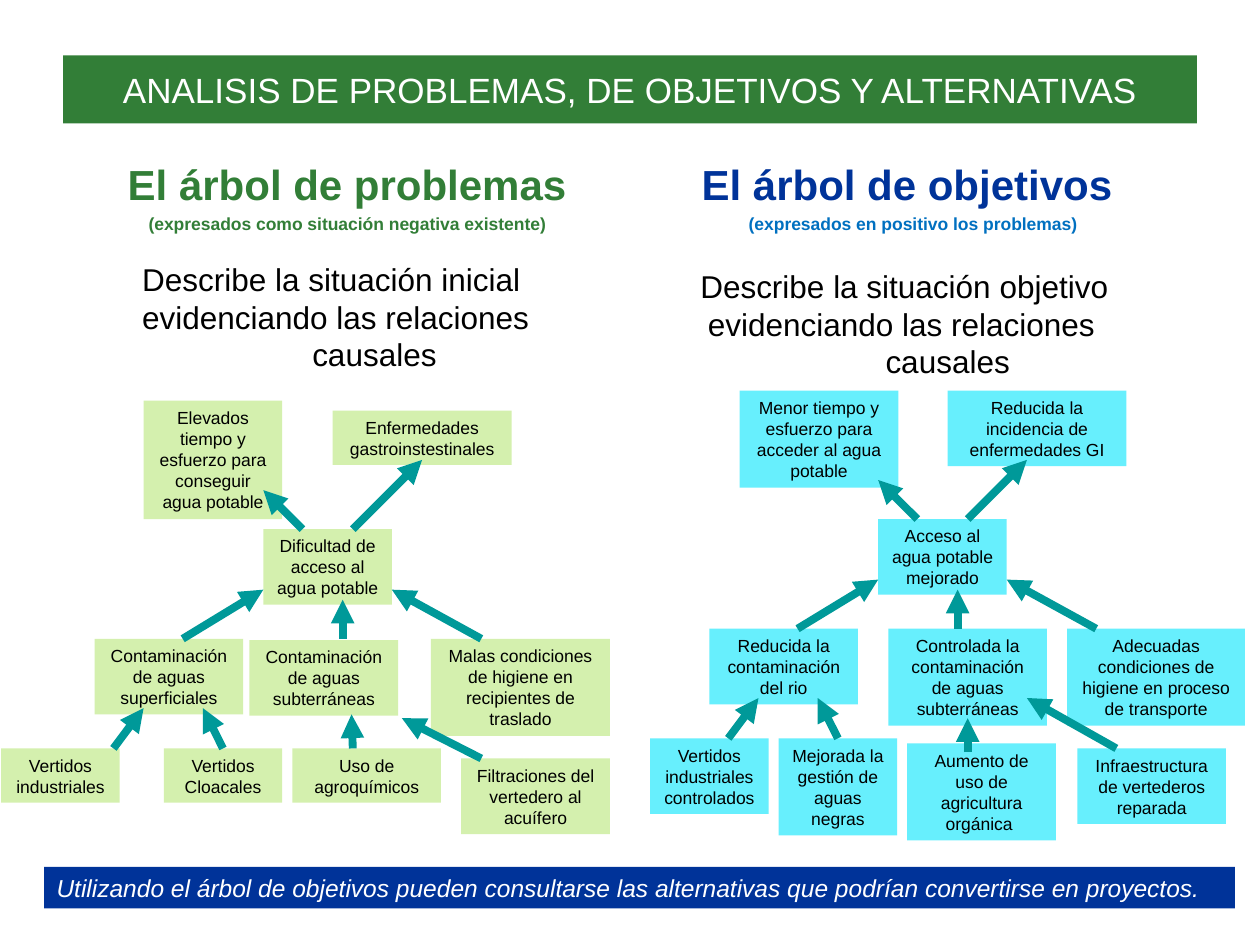
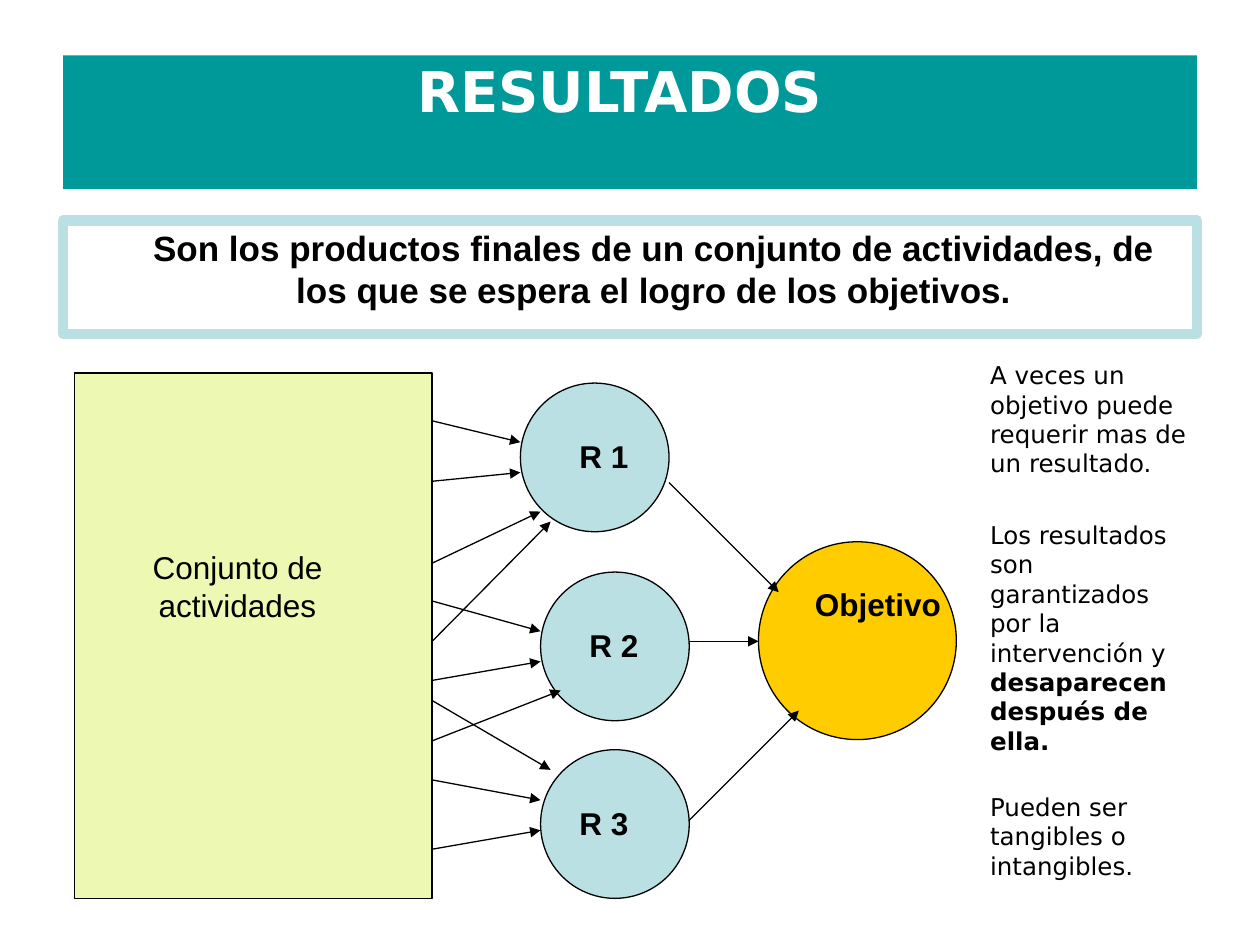
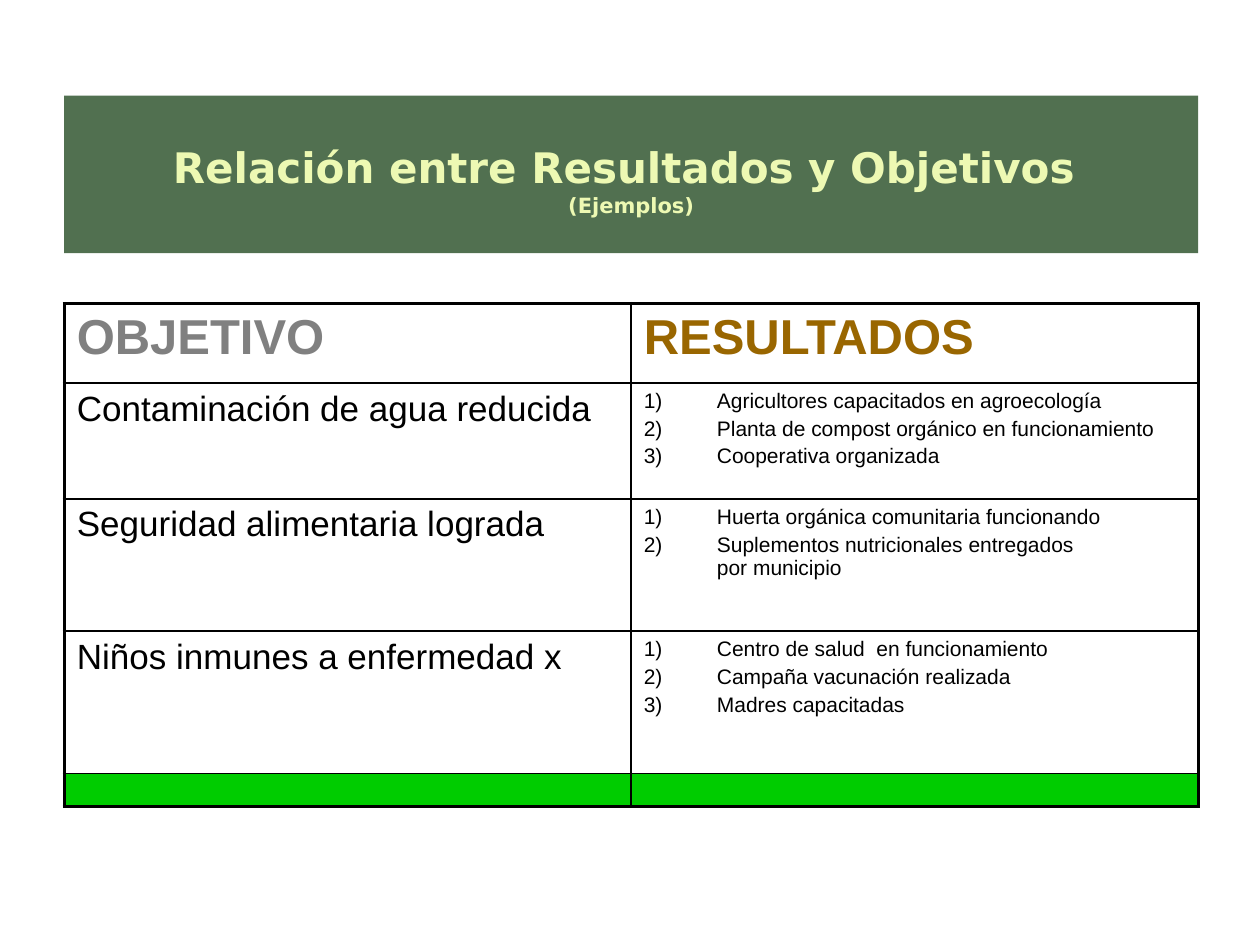
from collections import namedtuple

from lxml.etree import SubElement
from pptx import Presentation
from pptx.dml.color import RGBColor
from pptx.enum.shapes import MSO_CONNECTOR, MSO_SHAPE
from pptx.enum.text import MSO_ANCHOR, MSO_AUTO_SIZE, PP_ALIGN
from pptx.oxml.ns import qn
from pptx.util import Inches, Pt

BLACK = RGBColor(0x00, 0x00, 0x00)
WHITE = RGBColor(0xFF, 0xFF, 0xFF)
GREEN = RGBColor(0x32, 0x7E, 0x37)
NAVY = RGBColor(0x00, 0x33, 0x99)
BLUE = RGBColor(0x00, 0x70, 0xC0)
TEAL = RGBColor(0x00, 0x99, 0x99)
LEAF = RGBColor(0xD4, 0xF0, 0xAE)
CYAN = RGBColor(0x67, 0xEF, 0xFD)
PALE_BLUE = RGBColor(0xBB, 0xE0, 0xE3)
GOLD = RGBColor(0xFF, 0xCC, 0x00)
CREAM = RGBColor(0xED, 0xF9, 0xB3)
MOSS = RGBColor(0x51, 0x70, 0x50)
GRAY = RGBColor(0x80, 0x80, 0x80)
BROWN = RGBColor(0x99, 0x66, 0x00)
BRIGHT_GREEN = RGBColor(0x00, 0xCC, 0x00)

SANS = "Arial"
WIDE = "DejaVu Sans"
COLUMNS, ROWS = 100, 75
CELL = Inches(0.1)

Box = namedtuple("Box", "left top width height")
Node = namedtuple("Node", "column row width lines text")

SHARED_ARROWS = [
    ((3.1, 0), (0, -3.1)),
    ((17.3, 8.7), (10.2, 4.8)),
    ((6.3, 8.7), (6.3, 5.6)),
    ((-6.4, 8.7), (0, 4.8)),
    ((-11.9, 17.4), (-9.5, 14.2)),
    ((-3.2, 17.4), (-4.8, 14.2)),
]
PROBLEM_NODES = [
    Node(0, 0, 10.2, 3, "Dificultad de acceso al agua potable"),
    Node(13.3, 8.7, 14.2, 4, "Malas condiciones de higiene en recipientes de traslado"),
    Node(2.3, 17.4, 11.8, 2, "Uso de agroquímicos"),
    Node(15.7, 18.2, 11.8, 3, "Filtraciones del vertedero al acuífero"),
    Node(-13.4, 8.7, 11.8, 3, "Contaminación de aguas superficiales"),
    Node(-20.8, 17.4, 9.4, 2, "Vertidos industriales"),
    Node(-7.9, 17.4, 9.4, 2, "Vertidos Cloacales"),
    Node(-9.5, -10.2, 11, 5, "Elevados tiempo y esfuerzo para conseguir agua potable"),
    Node(5.5, -9.4, 14.2, 2, "Enfermedades gastroinstestinales"),
    Node(-1.1, 8.8, 11.8, 3, "Contaminación de aguas subterráneas"),
]
PROBLEM_ARROWS = [((7.1, 0), (12.6, -5.5)), ((7.1, 17.4), (7, 14.7)), ((17.3, 18.2), (11, 15))]
OBJECTIVE_NODES = [
    Node(0, 0, 10.2, 3, "Acceso al agua potable mejorado"),
    Node(0.8, 8.7, 12.6, 4, "Controlada la contaminación de aguas subterráneas"),
    Node(15, 8.7, 14.1, 4, "Adecuadas condiciones de higiene en proceso de transporte"),
    Node(2.3, 17.8, 11.8, 4, "Aumento de uso de agricultura orgánica "),
    Node(15.8, 18.2, 11.8, 3, "Infraestructura de vertederos reparada"),
    Node(-13.4, 8.7, 11.8, 3, "Reducida la contaminación del rio"),
    Node(-18.1, 17.4, 9.4, 3, "Vertidos industriales controlados"),
    Node(-7.9, 17.4, 9.4, 4, "Mejorada la gestión de aguas negras"),
    Node(-11, -10.2, 12.6, 4, "Menor tiempo y esfuerzo para acceder al agua potable"),
    Node(5.5, -10.2, 14.2, 3, "Reducida la incidencia de enfermedades GI"),
]
OBJECTIVE_ARROWS = [((7.1, 0), (11.8, -4.7)), ((7.1, 18.5), (7.1, 15.8)), ((18.9, 18.2), (11.8, 14.2))]

EXAMPLES = [
    ("Contaminación de agua reducida", [
        "Agricultores capacitados en agroecología",
        "Planta de compost orgánico en funcionamiento",
        "Cooperativa organizada"]),
    ("Seguridad alimentaria lograda", [
        "Huerta orgánica comunitaria funcionando",
        "Suplementos nutricionales entregados\vpor municipio"]),
    ("Niños inmunes a enfermedad x", [
        "Centro de salud  en funcionamiento",
        "Campaña vacunación realizada",
        "Madres capacitadas"]),
]


def grid(*lengths):
    """Turn grid cells into slide lengths."""
    return [round(length * CELL) for length in lengths]


def style(paragraph, size, color=BLACK, font=SANS, bold=False, align=PP_ALIGN.LEFT, before=0):
    """Set the font and spacing of a paragraph."""
    paragraph.font.name = font
    paragraph.font.size = Pt(size)
    paragraph.font.bold = bold
    paragraph.font.color.rgb = color
    paragraph.alignment = align
    paragraph.space_before = Pt(before)


def add_paragraph(frame, text, size, **options):
    """Write a styled paragraph, using the empty first one when it is free."""
    first = frame.paragraphs[0]
    paragraph = frame.add_paragraph() if first.text else first
    paragraph.text = text
    style(paragraph, size, **options)
    return paragraph


def add_block(slide, box, fill=None, line=None, weight=0.75, kind=MSO_SHAPE.RECTANGLE):
    """Draw a flat shape and return it."""
    shape = slide.shapes.add_shape(kind, *grid(*box))
    shape.shadow.inherit = False
    if fill is None:
        shape.fill.background()
    else:
        shape.fill.solid()
        shape.fill.fore_color.rgb = fill
    if line is None:
        shape.line.fill.background()
    else:
        shape.line.color.rgb = line
        shape.line.width = Pt(weight)
    shape.text_frame.word_wrap = True
    shape.text_frame.vertical_anchor = MSO_ANCHOR.TOP
    return shape


def add_text(slide, box):
    """Add a wrapping text box and return its frame."""
    frame = slide.shapes.add_textbox(*grid(*box)).text_frame
    frame.word_wrap = True
    return frame


def add_arrow(slide, start, end, color=BLACK, weight=0.75):
    """Draw a straight arrow between two grid points."""
    connector = slide.shapes.add_connector(MSO_CONNECTOR.STRAIGHT, *grid(*start, *end))
    connector.line.color.rgb = color
    connector.line.width = Pt(weight)
    properties = connector._element.spPr
    SubElement(properties.find(qn("a:ln")), qn("a:tailEnd"), type="triangle")
    SubElement(properties, qn("a:effectLst"))


def add_titled_slide(presentation, box, fill, lines, anchor=MSO_ANCHOR.MIDDLE, **options):
    """Add a slide whose title is a filled band, and return slide and title frame."""
    slide = presentation.slides.add_slide(presentation.slide_layouts[5])
    title = slide.shapes.title
    title.left, title.top, title.width, title.height = grid(*box)
    title.fill.solid()
    title.fill.fore_color.rgb = fill
    frame = title.text_frame
    frame.auto_size = MSO_AUTO_SIZE.NONE
    frame.vertical_anchor = anchor
    for text, size in lines:
        add_paragraph(frame, text, size, align=PP_ALIGN.CENTER, **options)
    return slide, frame


def add_tree_heading(slide, box, heading, note, colors, lines, gap):
    """Write a tree's heading, its note and its stepped description."""
    frame = add_text(slide, box)
    for text, size, color, before in zip((heading, note), (24, 10), colors, (5, 2)):
        add_paragraph(frame, text, size, color=color, bold=True, align=PP_ALIGN.CENTER, before=before)
    for index, (text, indent) in enumerate(lines):
        paragraph = add_paragraph(frame, text, 18, before=0 if index else gap)
        paragraph._p.get_or_add_pPr().set("marL", str(Inches(indent)))


def add_tree(slide, column, row, nodes, arrows, fill):
    """Draw nodes and arrows relative to the corner of the central node."""
    for node in nodes:
        box = Box(column + node.column, row + node.row, node.width, 0.9 + 1.7 * node.lines)
        frame = add_block(slide, box, fill).text_frame
        add_paragraph(frame, node.text, 10, align=PP_ALIGN.CENTER)
    for ends in SHARED_ARROWS + arrows:
        start, end = [(column + x, row + y) for x, y in ends]
        add_arrow(slide, start, end, TEAL, 4.5)


def build_trees(presentation):
    """Build the slide comparing the problem and objective trees."""
    slide, _ = add_titled_slide(
        presentation, Box(5, 4.4, 90, 5.4), GREEN,
        [("ANALISIS DE PROBLEMAS, DE OBJETIVOS Y ALTERNATIVAS", 20)], color=WHITE)
    add_tree_heading(
        slide, Box(5.9, 12.1, 43.3, 18), "El árbol de problemas",
        "(expresados como situación negativa existente)", (GREEN, GREEN),
        [("Describe la situación inicial", 0.44), ("evidenciando las relaciones", 0.44),
         ("causales", 1.79)], 15)
    add_tree_heading(
        slide, Box(50.8, 12.1, 43.3, 18), "El árbol de objetivos ",
        "(expresados en positivo los problemas)", (NAVY, BLUE),
        [("Describe la situación objetivo", 0.38), ("evidenciando las relaciones", 0.44),
         ("causales", 1.85)], 19)
    add_tree(slide, 20.9, 42, PROBLEM_NODES, PROBLEM_ARROWS, LEAF)
    add_tree(slide, 69.7, 41.2, OBJECTIVE_NODES, OBJECTIVE_ARROWS, CYAN)
    footer = add_block(slide, Box(3.5, 68.8, 94.5, 3.3), NAVY).text_frame
    paragraph = add_paragraph(
        footer, "Utilizando el árbol de objetivos pueden consultarse las alternativas "
        "que podrían convertirse en proyectos.", 14, color=WHITE)
    paragraph.font.italic = True


def add_results_diagram(slide, box):
    """Draw the activities, the three results and the objective inside a box."""
    left, top = box.left, box.top
    right = left + 28.4
    add_block(slide, Box(left, top, 28.4, box.height), CREAM, BLACK)
    label = add_text(slide, Box(left + 3.1, top + 13.4, 19.7, 7))
    add_paragraph(label, "Conjunto de actividades", 18, align=PP_ALIGN.CENTER)
    results = [(35.4, 0.8, 3.7), (37, 15.8, 2.9), (37, 29.9, 2.1)]
    for number, (column, row, shift) in enumerate(results, 1):
        circle = Box(left + column, top + row, 11.8, 11.8)
        add_block(slide, circle, PALE_BLUE, BLACK, kind=MSO_SHAPE.OVAL)
        label = add_text(slide, Box(circle.left + shift, circle.top + 3.8, 8.7, 4))
        add_paragraph(label, f"R {number}", 18, bold=True)
    add_block(slide, Box(left + 54.3, top + 13.4, 15.7, 15.7), GOLD, BLACK, kind=MSO_SHAPE.OVAL)
    label = add_text(slide, Box(left + 57.8, top + 16.3, 13.4, 7))
    add_paragraph(label, "Objetivo", 18, bold=True)
    for start_row, column, row in [
        (3.8, 35.4, 5.5), (8.6, 35.4, 7.9), (15.1, 37, 11), (21.3, 37.8, 11.8),
        (18.1, 37, 20.5), (24.4, 37, 22.9), (29.2, 38.6, 25.2),
        (26, 37.8, 31.5), (32.3, 37, 33.9), (37.8, 37, 36.3),
    ]:
        add_arrow(slide, (right, top + start_row), (left + column, top + row))
    for start, end in [((47.2, 8.7), (55.9, 17.4)), ((48.8, 21.3), (54.3, 21.3)),
                       ((48.8, 35.5), (57.5, 26.8))]:
        add_arrow(slide, *[(left + x, top + y) for x, y in (start, end)])


def add_results_notes(slide, box):
    """Write the remarks beside the diagram."""
    frame = add_text(slide, box)
    add_paragraph(frame, "A veces un objetivo puede requerir mas de un resultado.", 14, font=WIDE)
    paragraph = add_paragraph(
        frame, "Los resultados son garantizados por la intervención y ", 14, font=WIDE, before=24)
    run = paragraph.add_run()
    run.text = "desaparecen después de ella."
    run.font.bold = True
    add_paragraph(frame, "Pueden ser tangibles o intangibles.", 14, font=WIDE, before=21)


def build_results(presentation):
    """Build the slide that defines results."""
    slide, title = add_titled_slide(
        presentation, Box(5, 4.4, 90, 10.6), TEAL, [("RESULTADOS", 32)],
        anchor=MSO_ANCHOR.TOP, color=WHITE, font=WIDE, bold=True)
    title.margin_top, title.margin_right = Inches(0.01), Inches(0.26)
    definition = add_block(slide, Box(5, 17.5, 90, 9), line=PALE_BLUE, weight=6).text_frame
    definition.margin_left, definition.margin_right = Inches(0.58), Inches(0.2)
    add_paragraph(
        definition, "Son los productos finales de un conjunto de actividades, "
        "de los que se espera el logro de los objetivos.", 20, bold=True, align=PP_ALIGN.CENTER)
    add_results_diagram(slide, Box(5.9, 29.6, 70, 41.7))
    add_results_notes(slide, Box(77.6, 28.1, 18.1, 42.7))


def number_paragraph(paragraph):
    """Give a paragraph a hanging number."""
    properties = paragraph._p.get_or_add_pPr()
    properties.set("marL", str(Inches(0.58)))
    properties.set("indent", str(-Inches(0.58)))
    bullet = SubElement(properties, qn("a:buAutoNum"), type="arabicParenR")
    default_font = properties.find(qn("a:defRPr"))
    if default_font is not None:
        default_font.addprevious(bullet)


def set_borders(cell, outer_sides):
    """Draw black borders, thick on the outer sides."""
    properties = cell._tc.get_or_add_tcPr()
    for side in "LRTB":
        width = Pt(2.25 if side in outer_sides else 1)
        line = SubElement(properties, qn(f"a:ln{side}"), w=str(width))
        fill = SubElement(line, qn("a:solidFill"))
        SubElement(fill, qn("a:srgbClr"), val=str(BLACK))


def add_examples_table(slide, box, heights):
    """Fill the table of objectives and their results."""
    last = len(heights) - 1
    table = slide.shapes.add_table(len(heights), 2, *grid(*box)).table
    table.first_row = table.horz_banding = False
    for row, height in zip(table.rows, grid(*heights)):
        row.height = height
    for row_index, row in enumerate(table.rows):
        vertical = {0: "T", last: "B"}.get(row_index, "")
        for cell, side in zip(row.cells, "LR"):
            set_borders(cell, side + vertical)
            cell.fill.background()
    for cell, text, color in zip(table.rows[0].cells, ("OBJETIVO", "RESULTADOS"), (GRAY, BROWN)):
        add_paragraph(cell.text_frame, text, 28, color=color, bold=True)
    for index, (objective, results) in enumerate(EXAMPLES, 1):
        add_paragraph(table.cell(index, 0).text_frame, objective, 20)
        for position, result in enumerate(results):
            frame = table.cell(index, 1).text_frame
            number_paragraph(add_paragraph(frame, result, 12, before=2.4 if position else 0))
    for cell in table.rows[last].cells:
        cell.fill.solid()
        cell.fill.fore_color.rgb = BRIGHT_GREEN
        SubElement(cell.text_frame.paragraphs[0]._p, qn("a:endParaRPr"), sz="800")


def build_examples(presentation):
    """Build the slide relating results to objectives."""
    slide, title = add_titled_slide(
        presentation, Box(5.1, 7.6, 90, 12.5), MOSS,
        [("Relación entre Resultados y Objetivos ", 24), ("(Ejemplos)", 12)],
        color=CREAM, font=WIDE, bold=True)
    title.margin_top = Inches(0.13)
    add_examples_table(slide, Box(5.1, 24.1, 90, 39.9), [6.3, 9.2, 10.5, 11.3, 2.6])


def main():
    """Build and save the presentation."""
    presentation = Presentation()
    presentation.slide_width, presentation.slide_height = grid(COLUMNS, ROWS)
    build_trees(presentation)
    build_results(presentation)
    build_examples(presentation)
    presentation.save("out.pptx")


if __name__ == "__main__":
    main()
